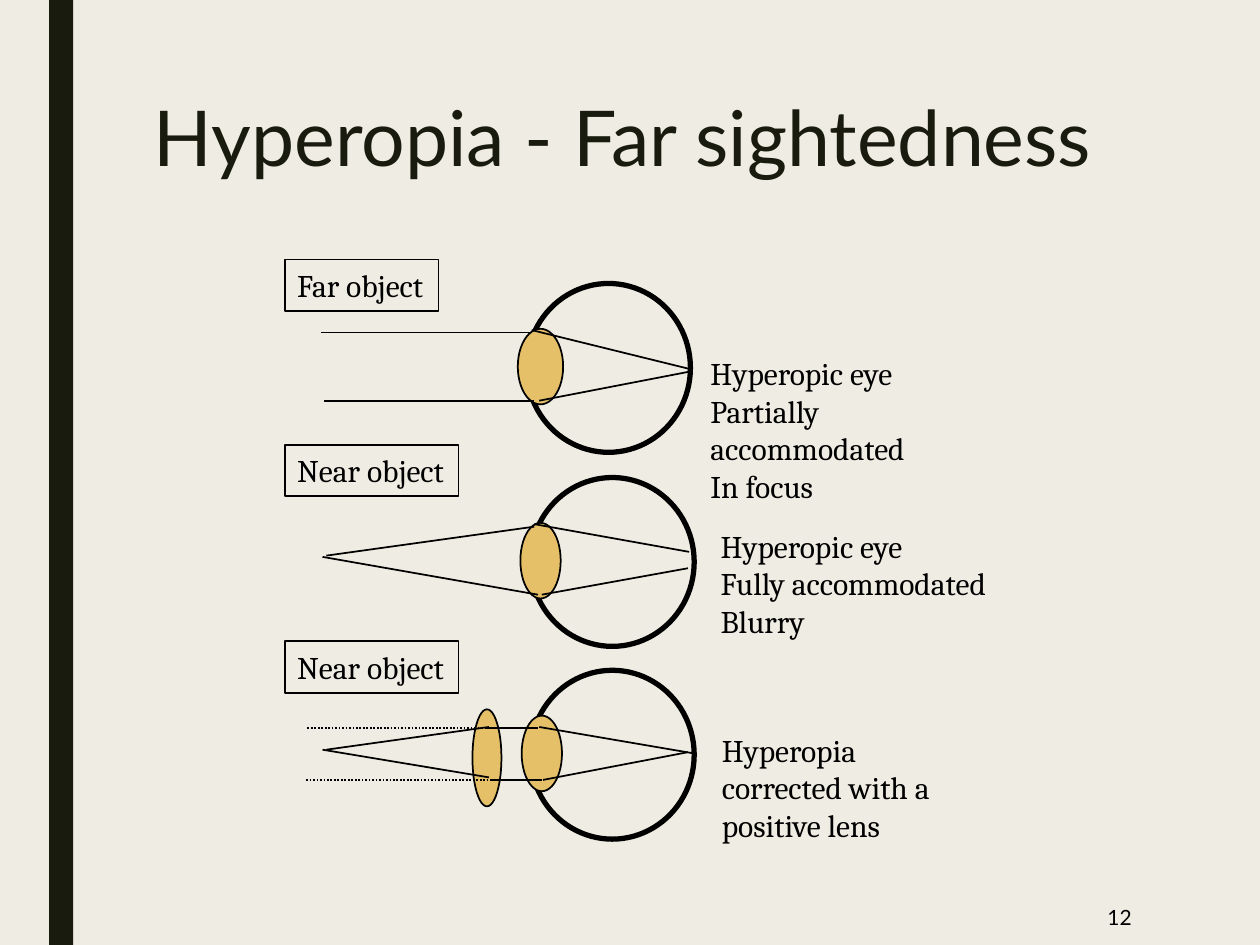
from lxml.etree import SubElement
from pptx import Presentation
from pptx.dml.color import RGBColor
from pptx.enum.dml import MSO_LINE
from pptx.enum.shapes import MSO_CONNECTOR, MSO_SHAPE
from pptx.enum.text import MSO_ANCHOR, PP_ALIGN
from pptx.oxml.ns import qn
from pptx.util import Inches, Pt

INK, DARK, PAPER, LENS = "000000", "191B0E", "EFEDE3", "E6C069"
COLUMNS, ROWS = 100, 75
GLOBE_WIDTH, GLOBE_HEIGHT, LENS_HEIGHT = 13, 13.4, 6


def colour(value):
    """Turn a hex string into a colour."""
    return RGBColor.from_string(value)


def write(frame, text, size=18, font="Cambria", ink=INK, align=PP_ALIGN.LEFT,
          anchor=MSO_ANCHOR.TOP, wrap=True, spacing=None):
    """Fill a text frame with one paragraph per line of text."""
    frame.word_wrap = wrap
    frame.vertical_anchor = anchor
    for index, line in enumerate(text.split("\n")):
        para = frame.add_paragraph() if index else frame.paragraphs[0]
        para.alignment = align
        para.line_spacing = spacing
        span = para.add_run()
        span.text = line
        span.font.size = Pt(size)
        span.font.name = font
        span.font.color.rgb = colour(ink)


class Diagram:
    """Hold the current slide and draw styled elements on its grid."""

    def __init__(self, deck):
        """Start a title-only slide with a plain background."""
        self.cell_width = deck.slide_width / COLUMNS
        self.cell_height = deck.slide_height / ROWS
        self.page = deck.slides.add_slide(deck.slide_layouts[5])
        self.page.background.fill.solid()
        self.page.background.fill.fore_color.rgb = colour(PAPER)

    def place(self, *cells):
        """Convert alternating columns and rows to lengths."""
        units = (self.cell_width, self.cell_height) * 2
        return [round(cell * unit) for cell, unit in zip(cells, units)]

    def title(self, text, *cells):
        """Move and format the title placeholder."""
        box = self.page.shapes.title
        box.left, box.top, box.width, box.height = self.place(*cells)
        write(box.text_frame, text, size=44, font="Lato", ink=DARK, spacing=0.89)

    def shape(self, kind, *cells, fill=None, line=None):
        """Add a preset shape with an optional fill and outline."""
        box = self.page.shapes.add_shape(kind, *self.place(*cells))
        box.shadow.inherit = False
        if fill:
            box.fill.solid()
            box.fill.fore_color.rgb = colour(fill)
        else:
            box.fill.background()
        if line:
            box.line.color.rgb = colour(INK)
            box.line.width = Pt(line)
        else:
            box.line.fill.background()
        return box

    def lens(self, *cells):
        """Add a lens."""
        self.shape(MSO_SHAPE.OVAL, *cells, fill=LENS, line=1)

    def eye(self, left, top, lens_left, lens_width):
        """Add an eyeball with the lens at its front."""
        self.shape(MSO_SHAPE.OVAL, left, top, GLOBE_WIDTH, GLOBE_HEIGHT, line=3)
        self.lens(lens_left, top + 3.6, lens_width, LENS_HEIGHT)

    def ray(self, *cells, dotted=False):
        """Add a light ray between two grid points."""
        line = self.page.shapes.add_connector(MSO_CONNECTOR.STRAIGHT, *self.place(*cells))
        line.line.color.rgb = colour(INK)
        line.line.width = Pt(1)
        if dotted:
            line.line.dash_style = MSO_LINE.ROUND_DOT
        SubElement(line._element.spPr, qn("a:effectLst"))

    def label(self, text, top, width):
        """Add a framed object label."""
        box = self.shape(MSO_SHAPE.RECTANGLE, 22.6, top, width, 4.1, line=1)
        write(box.text_frame, text, wrap=False)

    def text(self, text, *cells, **style):
        """Add a text box."""
        box = self.page.shapes.add_textbox(*self.place(*cells))
        write(box.text_frame, text, **style)


def main():
    """Build the hyperopia slide."""
    deck = Presentation()
    deck.slide_width, deck.slide_height = Inches(10), Inches(7.5)
    diagram = Diagram(deck)
    diagram.shape(MSO_SHAPE.RECTANGLE, 3.9, 0, 1.9, ROWS, fill=DARK)
    diagram.title("Hyperopia - Far sightedness", 11.2, 7.5, 78.8, 16.2)

    for eye in ((41.8, 22.5, 41.1, 3.6), (42.1, 37.9, 41.3, 3.2), (42.1, 53.2, 41.4, 3.2)):
        diagram.eye(*eye)
    diagram.lens(37.5, 56.3, 2.3, 7.7)

    far_rays = [(25.5, 26.4, 42.2, 26.4), (42.2, 26.2, 54.8, 29.3),
                (42.8, 31.8, 54.7, 29.5), (25.7, 31.8, 42.4, 31.8)]
    near_rays = [(25.9, 44.1, 42.4, 41.8), (42.4, 41.6, 54.7, 43.8),
                 (43, 47.2, 54.6, 45.1), (25.6, 44.2, 42.7, 47.2)]
    corrected_rays = [(42.8, 57.7, 55.1, 59.8), (43.1, 61.9, 54.6, 59.7),
                      (38.6, 57.8, 42.7, 57.8), (25.9, 59.5, 38.8, 57.7),
                      (25.6, 59.5, 38.8, 61.7), (38.9, 61.9, 43, 61.9)]
    for ray in far_rays + near_rays + corrected_rays:
        diagram.ray(*ray)
    for left, row in ((24.4, 57.8), (24.3, 61.9)):
        diagram.ray(left, row, 38.8, row, dotted=True)

    for text, top, width in (("Far object", 20.6, 12.2), ("Near object", 35.3, 13.8),
                             ("Near object", 50.9, 13.8)):
        diagram.label(text, top, width)

    diagram.text("Hyperopic eye\nPartially accommodated\nIn focus", 55.4, 27.6, 26.2, 10)
    diagram.text("Hyperopic eye\nFully accommodated\nBlurry", 56.2, 41.3, 23.1, 10, wrap=False)
    diagram.text("Hyperopia corrected with a positive lens", 56.3, 57.5, 22.1, 10)
    diagram.text("12", 77.7, 70.6, 13.1, 4.4, size=12, font="Lato",
                 align=PP_ALIGN.RIGHT, anchor=MSO_ANCHOR.MIDDLE)
    deck.save("out.pptx")


if __name__ == "__main__":
    main()
